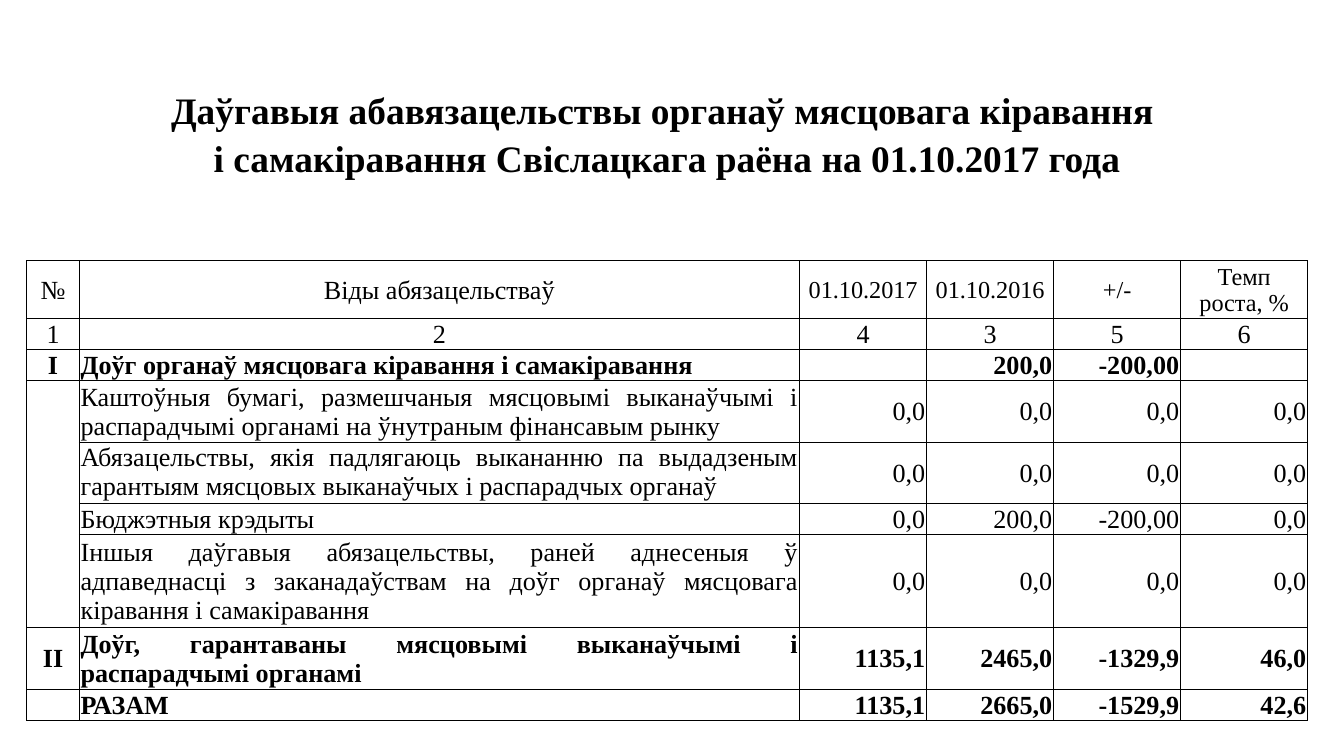
from dataclasses import dataclass

from lxml import etree
from pptx import Presentation
from pptx.dml.color import RGBColor
from pptx.enum import text
from pptx.oxml import ns
from pptx.util import Inches, Pt

ALIGN = text.PP_ALIGN
ANCHOR = text.MSO_ANCHOR

TITLE = ("Даўгавыя абавязацельствы органаў мясцовага кіравання \n"
         "і самакіравання Свіслацкага раёна на 01.10.2017 года")
HEADINGS = ["№", "Віды абязацельстваў", "01.10.2017", "01.10.2016", "+/-", "Темп\nроста, %"]
NUMBERS = ["1", "2", "4", "3", "5", "6"]
DEBTS = [
    ["I", "Доўг органаў мясцовага кіравання і самакіравання", "", "200,0", "-200,00", ""],
    ["", "Каштоўныя бумагі, размешчаныя мясцовымі выканаўчымі і распарадчымі органамі "
     "на ўнутраным фінансавым рынку", "0,0", "0,0", "0,0", "0,0"],
    ["", "Абязацельствы, якія падлягаюць выкананню па выдадзеным гарантыям мясцовых "
     "выканаўчых і распарадчых органаў", "0,0", "0,0", "0,0", "0,0"],
    ["", "Бюджэтныя крэдыты", "0,0", "200,0", "-200,00", "0,0"],
    ["", "Іншыя даўгавыя абязацельствы, раней аднесеныя ў адпаведнасці з заканадаўствам "
     "на доўг органаў мясцовага кіравання і самакіравання", "0,0", "0,0", "0,0", "0,0"],
    ["II", "Доўг, гарантаваны мясцовымі выканаўчымі і распарадчымі органамі",
     "1135,1", "2465,0", "-1329,9", "46,0"],
    ["", "РАЗАМ", "1135,1", "2665,0", "-1529,9", "42,6"],
]
TABLE_WIDTH, NUMBER_WIDTH, NAME_WIDTH = 9.53, 0.39, 5.36
VALUE_WIDTH = (TABLE_WIDTH - NUMBER_WIDTH - NAME_WIDTH) / 4
COLUMN_WIDTHS = [NUMBER_WIDTH, NAME_WIDTH] + [VALUE_WIDTH] * 4
ROW_HEIGHTS = [0.38, 0.75, 0.38, 0.22, 0.43, 0.23, 0.23, 0.46, 0.46, 0.23, 0.69, 0.46, 0.23]
TITLE_ROW, HEADING_ROW, NUMBER_ROW, FIRST_DEBT_ROW = 1, 4, 5, 6
DETAIL_ROWS = range(7, 11)
TOP_ALIGNED_ROW = 8
TOTAL_ROW = 12


@dataclass
class Theme:
    """Fonts, colours and sizes of the slide."""
    font: str = "Times New Roman"
    ink: RGBColor = RGBColor(0, 0, 0)
    paper: RGBColor = RGBColor(255, 255, 255)
    title_size: int = 20
    body_size: int = 14
    heading_size: int = 13
    empty_size: int = 8
    line_width: float = 0.5


class DebtSlide:
    """Holds the theme and the current slide."""

    def __init__(self, presentation, theme):
        self.theme = theme
        self.slide = presentation.slides.add_slide(presentation.slide_layouts[6])

    def add_table(self, left, top, widths, heights):
        """Add an unstyled table with the given column widths and row heights."""
        frame = self.slide.shapes.add_table(
            len(heights), len(widths), Inches(left), Inches(top),
            Inches(sum(widths)), Inches(sum(heights)))
        table = frame.table
        table.first_row = table.horz_banding = False
        for column, width in zip(table.columns, widths):
            column.width = Inches(width)
        for row, height in zip(table.rows, heights):
            row.height = Inches(height)
        return table

    def style_cell(self, cell, sides, filled=False):
        """Draw the named sides of a cell and set its margins and fill."""
        properties = cell._tc.get_or_add_tcPr()
        for side in "LRTB":
            line = etree.SubElement(properties, ns.qn(f"a:ln{side}"),
                                    w=str(Pt(self.theme.line_width)))
            if side in sides:
                fill = etree.SubElement(line, ns.qn("a:solidFill"))
                etree.SubElement(fill, ns.qn("a:srgbClr"), val=str(self.theme.ink))
            else:
                etree.SubElement(line, ns.qn("a:noFill"))
        cell.margin_left = cell.margin_right = cell.margin_top = Inches(0.01)
        cell.margin_bottom = 0
        if filled:
            cell.fill.solid()
            cell.fill.fore_color.rgb = self.theme.paper
        else:
            cell.fill.background()

    def write_cell(self, cell, words, size, align, anchor=ANCHOR.MIDDLE, bold=False, spacing=None):
        """Write formatted text in a cell."""
        cell.text_frame.text = words
        cell.vertical_anchor = anchor
        for paragraph in cell.text_frame.paragraphs:
            paragraph.alignment = align
            if spacing:
                paragraph.line_spacing = spacing
            if not paragraph.runs:
                paragraph._p.get_or_add_endParaRPr().set("sz", str(self.theme.empty_size * 100))
            for run in paragraph.runs:
                run.font.name = self.theme.font
                run.font.size = Pt(size)
                run.font.bold = bold
                run.font.color.rgb = self.theme.ink


def cell_sides(row, column):
    """Return the sides of a cell that carry a line."""
    if row < HEADING_ROW:
        return "B" if row == HEADING_ROW - 1 else ""
    if column == 0 and row in DETAIL_ROWS:
        top = "T" if row == DETAIL_ROWS[0] else ""
        bottom = "B" if row == DETAIL_ROWS[-1] else ""
        return "LR" + top + bottom
    return "LRTB"


def main():
    """Build and save the debt table slide."""
    presentation = Presentation()
    presentation.slide_width = Inches(10)
    presentation.slide_height = presentation.slide_width * 9 // 16
    theme = Theme()
    page = DebtSlide(presentation, theme)
    table = page.add_table(0.2, 0.21, COLUMN_WIDTHS, ROW_HEIGHTS)
    last_column = len(COLUMN_WIDTHS) - 1

    for row in range(len(ROW_HEIGHTS)):
        for column in range(len(COLUMN_WIDTHS)):
            filled = row == 2 or (row >= FIRST_DEBT_ROW and column >= 2)
            page.style_cell(table.cell(row, column), cell_sides(row, column), filled)

    for row in range(HEADING_ROW):
        cell = table.cell(row, 0)
        cell.merge(table.cell(row, last_column))
        page.write_cell(cell, TITLE if row == TITLE_ROW else "", theme.title_size,
                        ALIGN.CENTER, ANCHOR.BOTTOM, bold=True, spacing=1.15)

    for column, (heading, number) in enumerate(zip(HEADINGS, NUMBERS)):
        size = theme.body_size if column < 2 else theme.heading_size
        page.write_cell(table.cell(HEADING_ROW, column), heading, size, ALIGN.CENTER)
        page.write_cell(table.cell(NUMBER_ROW, column), number, theme.body_size,
                        ALIGN.CENTER, ANCHOR.BOTTOM)

    for row, debt in enumerate(DEBTS, FIRST_DEBT_ROW):
        name_align = ALIGN.LEFT if row == TOTAL_ROW else ALIGN.JUSTIFY
        aligns = [ALIGN.CENTER, name_align] + [ALIGN.RIGHT] * 4
        for column, (words, align) in enumerate(zip(debt, aligns)):
            at_top = row == TOP_ALIGNED_ROW and column == 1
            page.write_cell(table.cell(row, column), words, theme.body_size, align,
                            ANCHOR.TOP if at_top else ANCHOR.MIDDLE,
                            bold=row not in DETAIL_ROWS)

    presentation.save("out.pptx")


if __name__ == "__main__":
    main()
